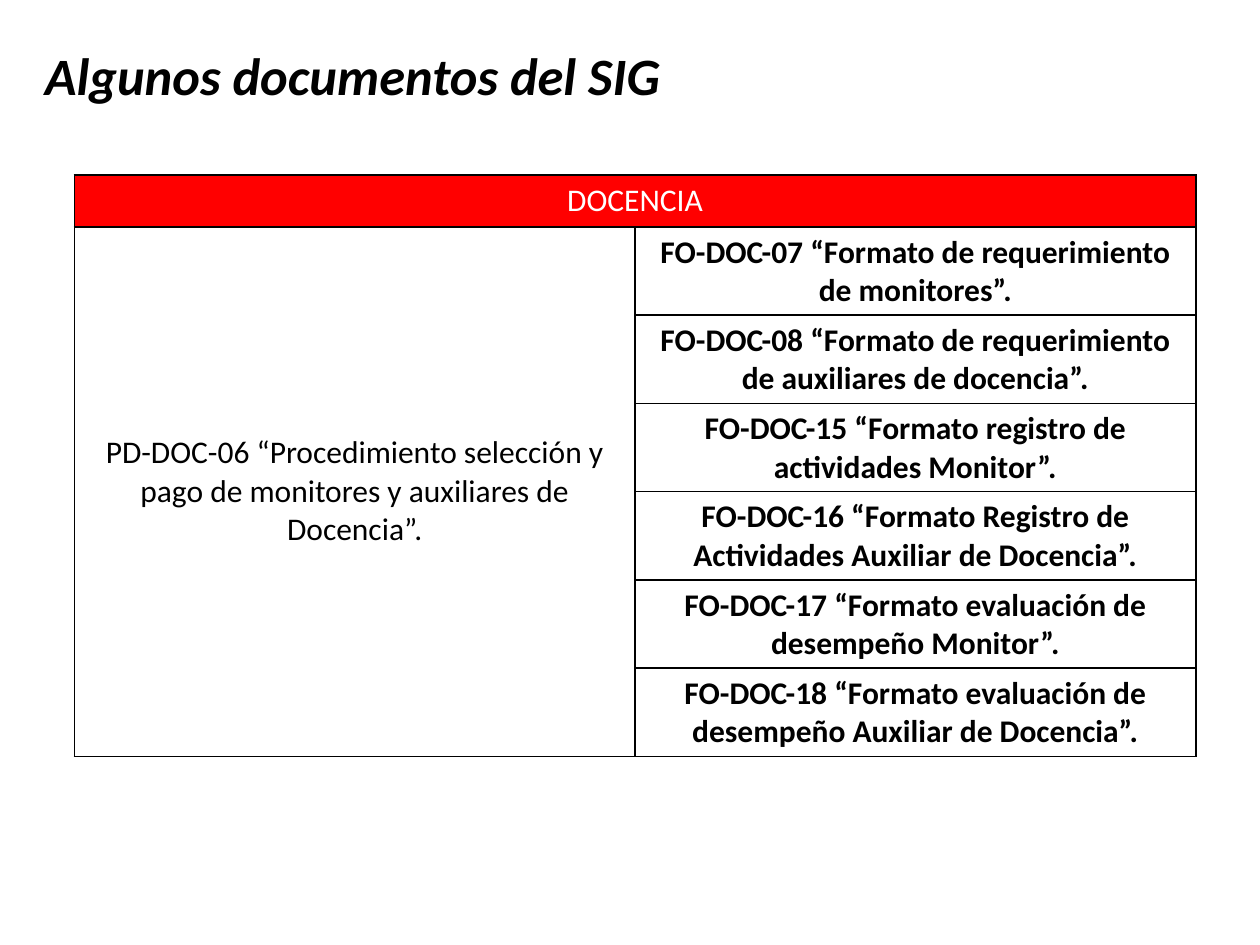
from lxml import etree
from pptx import Presentation
from pptx.dml.color import RGBColor
from pptx.enum.text import MSO_ANCHOR, PP_ALIGN
from pptx.oxml.ns import qn
from pptx.util import Inches, Pt

CENTER = PP_ALIGN.CENTER
TOP = MSO_ANCHOR.TOP
MIDDLE = MSO_ANCHOR.MIDDLE
FONT = "Calibri"
COLORS = {"text": "000000", "border": "000000", "header": "FF0000", "white": "FFFFFF"}
PROCEDURE = "PD-DOC-06 “Procedimiento selección y pago de monitores y auxiliares de Docencia”."
FORMATS = [
    "FO-DOC-07 “Formato de requerimiento de monitores”.",
    "FO-DOC-08 “Formato de requerimiento de auxiliares de docencia”.",
    "FO-DOC-15 “Formato registro de actividades Monitor”.",
    "FO-DOC-16 “Formato Registro de Actividades Auxiliar de Docencia”.",
    "FO-DOC-17 “Formato evaluación de desempeño Monitor”.",
    "FO-DOC-18 “Formato evaluación de desempeño Auxiliar de Docencia”.",
]


def write_text(frame, text, size=18, color="text", bold=False, italic=False):
    """Write one centred, formatted paragraph into a text frame."""
    frame.word_wrap = True
    paragraph = frame.paragraphs[0]
    paragraph.alignment = CENTER
    run = paragraph.add_run()
    run.text = text
    font = run.font
    font.name = FONT
    font.size = Pt(size)
    font.bold = bold
    font.italic = italic
    font.color.rgb = RGBColor.from_string(COLORS[color])


def add_title(slide, text):
    """Add the slide title."""
    title = slide.shapes.add_textbox(Inches(0.2), Inches(0.29), Inches(5.2), Inches(0.61))
    write_text(title.text_frame, text, size=30, bold=True, italic=True)


def style_cell(cell, fill):
    """Give a cell thin borders on all sides and a solid fill."""
    properties = cell._tc.get_or_add_tcPr()
    for side in ("a:lnL", "a:lnR", "a:lnT", "a:lnB"):
        line = etree.SubElement(properties, qn(side), w=str(Pt(1)))
        solid = etree.SubElement(line, qn("a:solidFill"))
        etree.SubElement(solid, qn("a:srgbClr"), val=COLORS["border"])
    cell.fill.solid()
    cell.fill.fore_color.rgb = RGBColor.from_string(COLORS[fill])


def fill_cell(cell, text, anchor=MIDDLE, **text_format):
    """Write anchored text into a table cell."""
    cell.vertical_anchor = anchor
    write_text(cell.text_frame, text, **text_format)


def add_documents_table(slide, heading, procedure, formats):
    """Add the table that pairs a procedure with its formats."""
    header_height, format_height = Inches(0.41), Inches(0.7)
    table = slide.shapes.add_table(
        len(formats) + 1, 2, Inches(0.59), Inches(1.39), Inches(8.9),
        header_height + format_height * len(formats),
    ).table
    table.horz_banding = False
    for index, row in enumerate(table.rows):
        row.height = format_height if index else header_height
        for cell in row.cells:
            style_cell(cell, "white" if index else "header")
    table.cell(0, 0).merge(table.cell(0, 1))
    table.cell(1, 0).merge(table.cell(len(formats), 0))
    fill_cell(table.cell(0, 0), heading, anchor=TOP, color="white")
    fill_cell(table.cell(1, 0), procedure)
    for index, name in enumerate(formats, start=1):
        fill_cell(table.cell(index, 1), name, bold=True)


def main():
    """Build and save the slide."""
    presentation = Presentation()
    presentation.slide_width = Inches(10)
    presentation.slide_height = Inches(7.5)
    slide = presentation.slides.add_slide(presentation.slide_layouts[6])
    add_title(slide, "Algunos documentos del SIG")
    add_documents_table(slide, "DOCENCIA", PROCEDURE, FORMATS)
    presentation.save("out.pptx")


if __name__ == "__main__":
    main()
